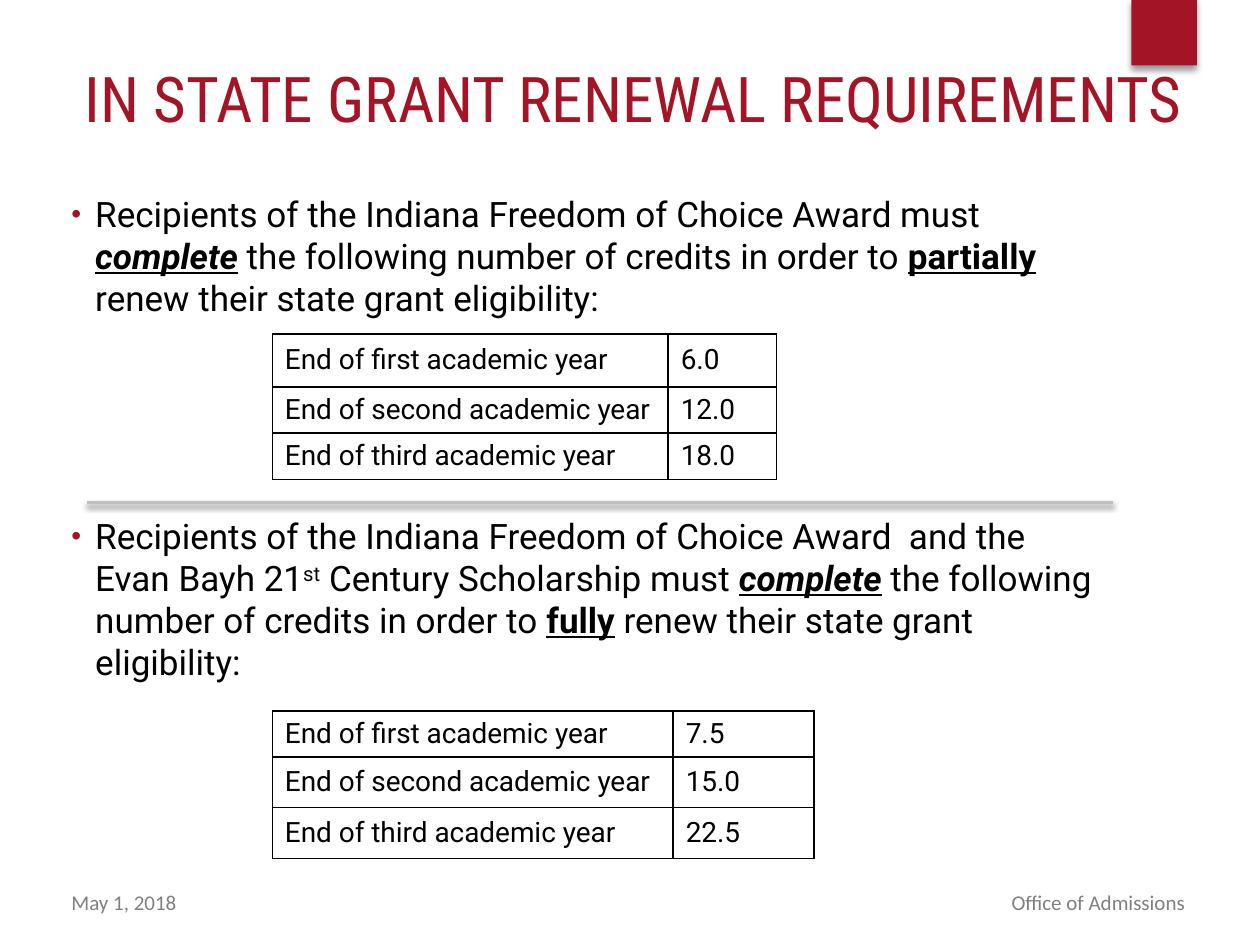
from lxml import etree
from pptx import Presentation
from pptx.dml.color import RGBColor
from pptx.enum.shapes import MSO_CONNECTOR, MSO_SHAPE
from pptx.enum.text import MSO_ANCHOR, MSO_AUTO_SIZE, PP_ALIGN
from pptx.oxml import parse_xml
from pptx.oxml.ns import nsdecls, qn
from pptx.util import Cm, Pt

RED = RGBColor(0xA4, 0x14, 0x27)
BLACK = RGBColor(0x00, 0x00, 0x00)
GRAY = RGBColor(0x80, 0x80, 0x80)
RULE_GRAY = RGBColor(0xBF, 0xC0, 0xBE)
LEFT, RIGHT, CENTER = PP_ALIGN.LEFT, PP_ALIGN.RIGHT, PP_ALIGN.CENTER
MIDDLE = MSO_ANCHOR.MIDDLE
NO_AUTOFIT = MSO_AUTO_SIZE.NONE
RECTANGLE = MSO_SHAPE.RECTANGLE
STRAIGHT = MSO_CONNECTOR.STRAIGHT

YEARS = ("End of first academic year", "End of second academic year",
         "End of third academic year")
PARTIAL = [
    ("Recipients of the Indiana Freedom of Choice Award must ", ""),
    ("complete", "biu"),
    (" the following number of credits in order to ", ""),
    ("partially", "bu"),
    (" renew their state grant eligibility:", ""),
]
FULL = [
    ("Recipients of the Indiana Freedom of Choice Award  and the Evan Bayh 21", ""),
    ("st", "s"),
    (" Century Scholarship must ", ""),
    ("complete", "biu"),
    (" the following number of credits in order to ", ""),
    ("fully", "bu"),
    (" renew their state grant eligibility:", ""),
]


def style_font(font, name, size, color):
    """Set the typeface, size and colour of a font."""
    font.name = name
    font.size = Pt(size)
    font.color.rgb = color


def add_shadow(sp, blur, dist, alpha):
    """Give a shape or connector a soft black shadow below it."""
    sp._element.spPr.append(parse_xml(
        f'<a:effectLst {nsdecls("a")}>'
        f'<a:outerShdw blurRad="{Pt(blur)}" dist="{Pt(dist)}" dir="5400000" rotWithShape="0">'
        f'<a:srgbClr val="000000"><a:alpha val="{alpha * 1000}"/></a:srgbClr>'
        '</a:outerShdw></a:effectLst>'))


def add_badge(s):
    """Add the plain red square at the top edge."""
    sp = s.shapes.add_shape(RECTANGLE, Cm(22.81), Cm(-0.03), Cm(1.32), Cm(1.35))
    sp.fill.solid()
    sp.fill.fore_color.rgb = RED
    sp.line.fill.background()
    add_shadow(sp, 4, 3, 40)


def add_footer(s, text, left, align):
    """Add one gray footer text."""
    tf = s.shapes.add_textbox(Cm(left), Cm(17.81), Cm(5.72), Cm(0.76)).text_frame
    tf.word_wrap = True
    p = tf.paragraphs[0]
    p.text = text
    p.alignment = align
    style_font(p.runs[0].font, "Calibri", 12, GRAY)


def set_title(s, text):
    """Place and format the title placeholder."""
    sp = s.shapes.title
    sp.left, sp.top, sp.width, sp.height = Cm(0), Cm(0.64), Cm(25.53), Cm(2.69)
    tf = sp.text_frame
    tf.text = text
    tf.auto_size = NO_AUTOFIT
    tf.vertical_anchor = MIDDLE
    p = tf.paragraphs[0]
    p.alignment = CENTER
    p.line_spacing = Pt(42)
    style_font(p.runs[0].font, "Roboto Condensed", 36, RED)


def add_bullet(p):
    """Give a paragraph a small red bullet with a hanging indent."""
    pPr = p._p.get_or_add_pPr()
    pPr.set("marL", str(Cm(0.48)))
    pPr.set("indent", str(Cm(-0.48)))
    color = etree.SubElement(pPr, qn("a:buClr"))
    etree.SubElement(color, qn("a:srgbClr"), val=str(RED))
    etree.SubElement(pPr, qn("a:buSzPct"), val="80000")
    etree.SubElement(pPr, qn("a:buFont"), typeface="Arial")
    etree.SubElement(pPr, qn("a:buChar"), char="•")


def add_runs(p, parts):
    """Write runs flagged b(old), i(talic), u(nderlined) or s(uperscript)."""
    for text, flags in parts:
        r = p.add_run()
        r.text = text
        style_font(r.font, "Roboto", 20, BLACK)
        r.font.bold = "b" in flags
        r.font.italic = "i" in flags
        r.font.underline = "u" in flags
        if "s" in flags:
            r._r.get_or_add_rPr().set("baseline", "30000")


def add_requirements(s):
    """Add the two bulleted requirements, with room for a table between."""
    tf = s.shapes.add_textbox(Cm(1.19), Cm(3.76), Cm(21.23), Cm(13.84)).text_frame
    tf.word_wrap = True
    first, second = tf.paragraphs[0], tf.add_paragraph()
    for p, parts in ((first, PARTIAL), (second, FULL)):
        add_bullet(p)
        add_runs(p, parts)
    second.space_before = Pt(112)


def add_rule(s):
    """Add the gray rule between the two requirements."""
    line = s.shapes.add_connector(STRAIGHT, Cm(1.75), Cm(10.13), Cm(22.43), Cm(10.13))
    line.line.color.rgb = RULE_GRAY
    line.line.width = Pt(2)
    add_shadow(line, 3.1, 1.6, 38)


def format_cell(cell, text):
    """Fill one cell with text and draw thin black borders around it."""
    cell.text = text
    cell.vertical_anchor = MIDDLE
    tcPr = cell._tc.get_or_add_tcPr()
    for side in ("lnL", "lnR", "lnT", "lnB"):
        ln = etree.SubElement(tcPr, qn(f"a:{side}"), w=str(Pt(1)))
        fill = etree.SubElement(ln, qn("a:solidFill"))
        etree.SubElement(fill, qn("a:srgbClr"), val=str(BLACK))
    cell.fill.background()
    style_font(cell.text_frame.paragraphs[0].runs[0].font, "Roboto", 16, BLACK)


def add_credit_table(s, top, widths, heights, credits):
    """Add a table of credits needed by the end of each year."""
    table = s.shapes.add_table(len(YEARS), 2, Cm(5.49), Cm(top),
                               Cm(sum(widths)), Cm(sum(heights))).table
    table.first_row = False
    table.horz_banding = False
    for column, width in zip(table.columns, widths):
        column.width = Cm(width)
    for row, height, values in zip(table.rows, heights, zip(YEARS, credits)):
        row.height = Cm(height)
        for cell, text in zip(row.cells, values):
            format_cell(cell, text)


def main():
    """Build the slide and save it."""
    prs = Presentation()
    prs.slide_width, prs.slide_height = Cm(25.4), Cm(19.05)
    s = prs.slides.add_slide(prs.slide_layouts[5])
    add_badge(s)
    add_footer(s, "Office of Admissions", 18.42, RIGHT)
    add_footer(s, "May 1, 2018", 1.19, LEFT)
    set_title(s, "IN STATE GRANT RENEWAL REQUIREMENTS")
    add_requirements(s)
    add_rule(s)
    add_credit_table(s, 6.73, (7.98, 2.18), (1.07, 0.91, 0.91), ("6.0", "12.0", "18.0"))
    add_credit_table(s, 14.33, (8.08, 2.84), (0.91, 1.02, 1.02), ("7.5", "15.0", "22.5"))
    prs.save("out.pptx")


if __name__ == "__main__":
    main()
